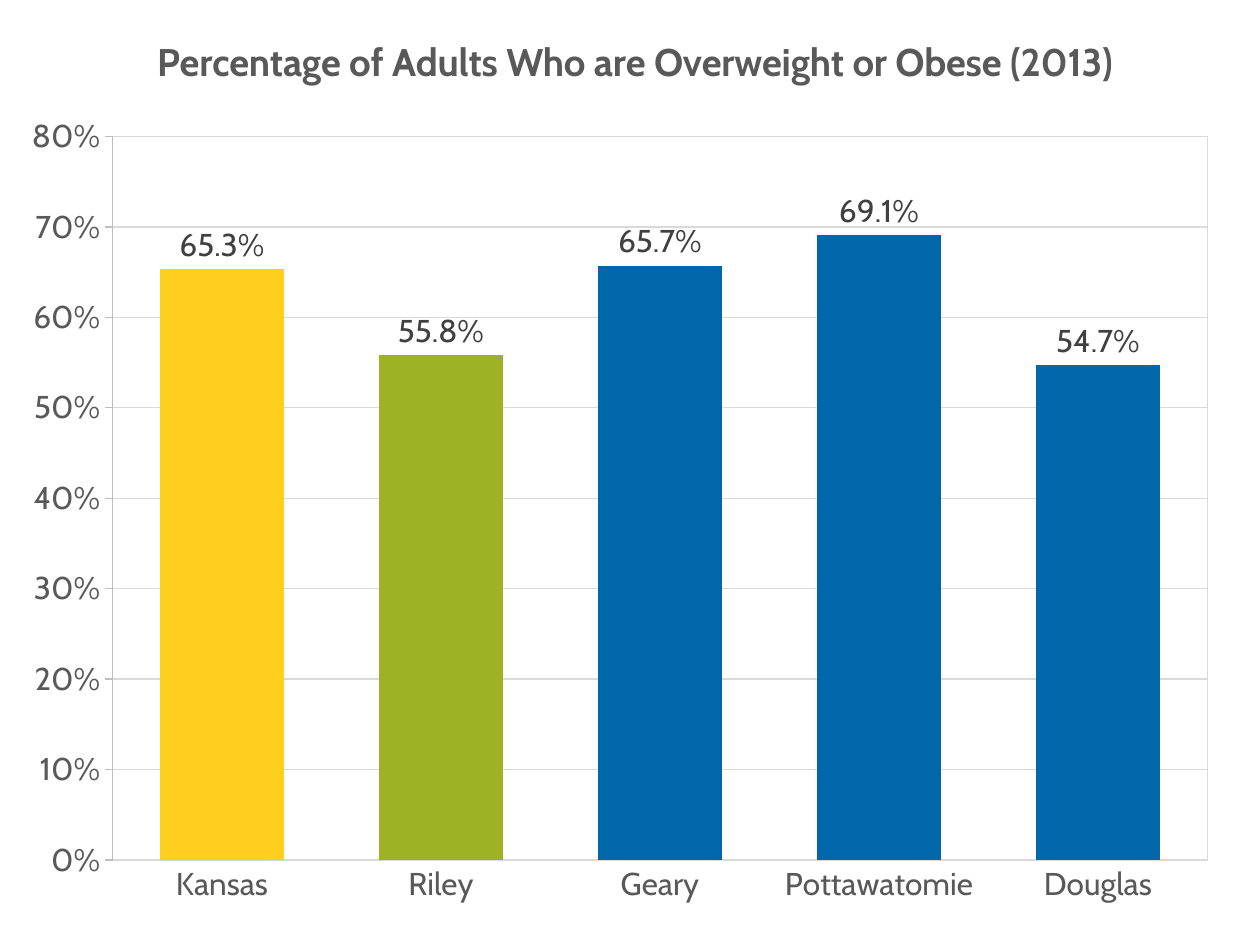
import dataclasses

import lxml.etree
import pptx
import pptx.chart.data
import pptx.dml.color
import pptx.enum.chart
import pptx.oxml.ns
import pptx.util

Inches = pptx.util.Inches
Pt = pptx.util.Pt
qn = pptx.oxml.ns.qn


@dataclasses.dataclass(frozen=True)
class Theme:
    font: str = "Cabin"
    title_size: int = 22
    text_size: int = 18
    line_width: float = 0.75
    text: str = "595959"
    label: str = "404040"
    grid: str = "D9D9D9"
    axis: str = "BDBDBD"
    state: str = "FFCF1D"
    home_county: str = "9EB323"
    county: str = "0067AA"


class SlideBuilder:
    def __init__(self, prs, theme):
        self.theme = theme
        self.s = prs.slides.add_slide(prs.slide_layouts[6])

    def style_font(self, font, size, color, bold=False):
        font.name = self.theme.font
        font.size = Pt(size)
        font.bold = bold
        font.color.rgb = pptx.dml.color.RGBColor.from_string(color)

    def style_line(self, line, color):
        line.width = Pt(self.theme.line_width)
        line.color.rgb = pptx.dml.color.RGBColor.from_string(color)

    def make_layout(self, **settings):
        layout = lxml.etree.Element(qn("c:layout"))
        manual = lxml.etree.SubElement(layout, qn("c:manualLayout"))
        for name, value in settings.items():
            lxml.etree.SubElement(manual, qn(f"c:{name}")).set("val", str(value))
        return layout

    def drop_layout(self, parent):
        for old in parent.findall(qn("c:layout")):
            parent.remove(old)

    def add_title(self, chart, text):
        chart.has_title = True
        p = chart.chart_title.text_frame.paragraphs[0]
        r = p.add_run()
        r.text = text
        self.style_font(r.font, self.theme.title_size, self.theme.text, bold=True)
        chart.chart_title.include_in_layout = False
        title = chart._chartSpace.chart.find(qn("c:title"))
        self.drop_layout(title)
        title.find(qn("c:tx")).addnext(
            self.make_layout(xMode="edge", yMode="edge", x=0.12, y=0.03))

    def style_axes(self, chart):
        t = self.theme
        tick = pptx.enum.chart.XL_TICK_MARK
        axes = ((chart.category_axis, tick.NONE, t.grid),
                (chart.value_axis, tick.OUTSIDE, t.axis))
        for axis, mark, color in axes:
            axis.major_tick_mark = mark
            axis.minor_tick_mark = tick.NONE
            self.style_font(axis.tick_labels.font, t.text_size, t.text)
            self.style_line(axis.format.line, color)
        value_axis = chart.value_axis
        value_axis.minimum_scale, value_axis.maximum_scale = 0, 0.8
        value_axis.major_unit = 0.1
        value_axis.tick_labels.number_format = "0%"
        value_axis.tick_labels.number_format_is_linked = False
        value_axis.has_major_gridlines = True
        self.style_line(value_axis.major_gridlines.format.line, t.grid)

    def style_plot_area(self, chart):
        area = chart._chartSpace.chart.plotArea
        self.drop_layout(area)
        area.insert(0, self.make_layout(
            layoutTarget="inner", xMode="edge", yMode="edge",
            x=0.09, y=0.146, w=0.876, h=0.774))
        sp_pr = lxml.etree.SubElement(area, qn("c:spPr"))
        lxml.etree.SubElement(sp_pr, qn("a:noFill"))
        ln = lxml.etree.SubElement(sp_pr, qn("a:ln"), w=str(int(Pt(self.theme.line_width))))
        fill = lxml.etree.SubElement(ln, qn("a:solidFill"))
        lxml.etree.SubElement(fill, qn("a:srgbClr"), val=self.theme.grid)

    def add_column_chart(self, title, bars, left, top, width, height):
        data = pptx.chart.data.CategoryChartData(number_format="0.0%")
        data.categories = [name for name, value, color in bars]
        data.add_series("Series 1", [value for name, value, color in bars])
        chart = self.s.shapes.add_chart(
            pptx.enum.chart.XL_CHART_TYPE.COLUMN_CLUSTERED,
            Inches(left), Inches(top), Inches(width), Inches(height), data).chart
        chart.has_legend = False
        chart.font.name = self.theme.font
        self.add_title(chart, title)
        self.style_axes(chart)
        self.style_plot_area(chart)
        plot = chart.plots[0]
        plot.gap_width = 77
        plot.vary_by_categories = False
        for i, (name, value, color) in enumerate(bars):
            fill = plot.series[0].points[i].format.fill
            fill.solid()
            fill.fore_color.rgb = pptx.dml.color.RGBColor.from_string(color)
        labels = plot.series[0].data_labels
        labels.show_value = True
        labels.number_format = "0.0%"
        labels.number_format_is_linked = False
        labels.position = pptx.enum.chart.XL_LABEL_POSITION.OUTSIDE_END
        self.style_font(labels.font, self.theme.text_size, self.theme.label)


def main():
    prs = pptx.Presentation()
    prs.slide_width, prs.slide_height = Inches(10), Inches(7.5)
    theme = Theme()
    bars = [
        ("Kansas", 0.653, theme.state),
        ("Riley", 0.558, theme.home_county),
        ("Geary", 0.657, theme.county),
        ("Pottawatomie", 0.691, theme.county),
        ("Douglas", 0.547, theme.county),
    ]
    SlideBuilder(prs, theme).add_column_chart(
        "Percentage of Adults Who are Overweight or Obese (2013)",
        bars, 0, 0, 9.92, 7.42)
    prs.save("out.pptx")


if __name__ == "__main__":
    main()
